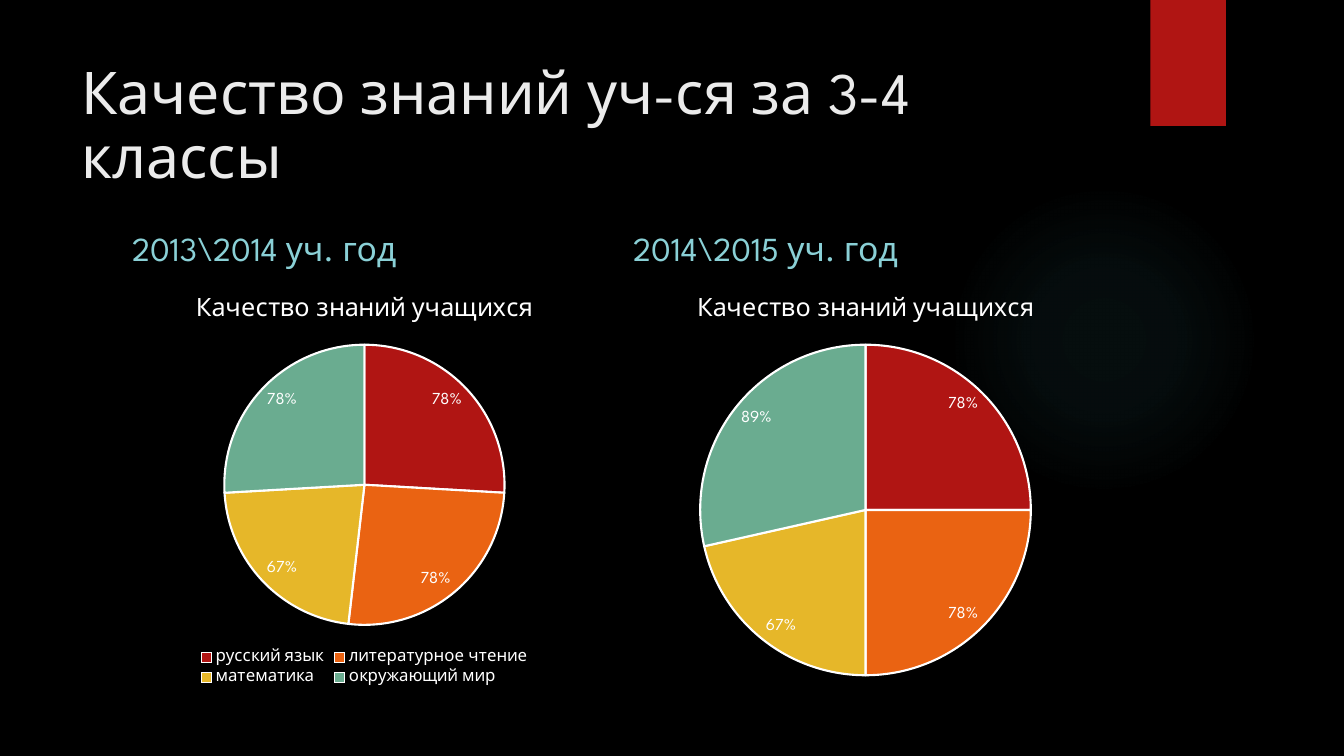
import pptx
import pptx.util
import pptx.oxml
import pptx.oxml.ns
import pptx.chart.data
import pptx.dml.color
import pptx.enum.chart
import pptx.enum.shapes
import pptx.enum.text

Inches = pptx.util.Inches
Pt = pptx.util.Pt
qn = pptx.oxml.ns.qn

FONT = "League Spartan"
COLOURS = {
    "background": "000000",
    "title": "EBEBEB",
    "heading": "8AD0D6",
    "chart_text": "FFFFFF",
    "ribbon": "B01513",
    "glow": "50B9C1",
}
SLICES = ["B01513", "EA6312", "E6B729", "6AAC90"]
CHART_WIDTH, CHART_HEIGHT, CHART_TOP = 4.81, 4.09, 2.75
PIE_OFFSET = 0.67
SUBJECTS = ["русский язык", "литературное чтение", "математика", "окружающий мир"]
YEARS = [
    (1, 1.21, "2013\\2014 уч. год", SUBJECTS, [0.78, 0.78, 0.67, 0.78], 2.78, True),
    (3, 6.18, "2014\\2015 уч. год", ["1", "2", "3", "4"], [0.78, 0.78, 0.67, 0.89], 3.28, False),
]


def rgb(value):
    return pptx.dml.color.RGBColor.from_string(value)


def style_font(font, size, colour):
    font.name = FONT
    font.size = Pt(size)
    font.bold = False
    font.color.rgb = rgb(COLOURS[colour])


def add_decoration(page, kind, left, top, width, height, colour):
    shape = page.shapes.add_shape(
        kind, Inches(left), Inches(top), Inches(width), Inches(height))
    shape.shadow.inherit = False
    shape.fill.solid()
    shape.fill.fore_color.rgb = rgb(COLOURS[colour])
    shape.line.fill.background()
    return shape


def add_glow(page):
    glow = add_decoration(
        page, pptx.enum.shapes.MSO_SHAPE.OVAL, 9.41, 1.83, 3.08, 3.08, "glow")
    stops = "".join(
        f'<a:gs pos="{position * 1000}"><a:srgbClr val="{COLOURS["glow"]}">'
        f'<a:alpha val="{alpha * 1000}"/></a:srgbClr></a:gs>'
        for position, alpha in [(0, 7), (36, 6), (69, 0)])
    gradient = pptx.oxml.parse_xml(
        f'<a:gradFill {pptx.oxml.ns.nsdecls("a")}><a:gsLst>{stops}</a:gsLst>'
        '<a:path path="circle"><a:fillToRect l="50000" t="50000" r="50000" b="50000"/>'
        '</a:path></a:gradFill>')
    solid = glow.element.spPr.find(qn("a:solidFill"))
    solid.getparent().replace(solid, gradient)


def add_ribbon(page):
    ribbon = add_decoration(
        page, pptx.enum.shapes.MSO_SHAPE.RECTANGLE, 11.41, 0, 0.75, 1.25, "ribbon")
    shadow = pptx.oxml.parse_xml(
        f'<a:outerShdw {pptx.oxml.ns.nsdecls("a")} blurRad="{Pt(3)}" dist="{Pt(2)}" '
        'dir="5400000" rotWithShape="0"><a:srgbClr val="000000">'
        '<a:alpha val="45000"/></a:srgbClr></a:outerShdw>')
    ribbon.element.spPr.find(qn("a:effectLst")).append(shadow)


def fill_placeholder(box, place, text, size, colour, anchor):
    box.left, box.top, box.width, box.height = [Inches(length) for length in place]
    frame = box.text_frame
    frame.word_wrap = True
    frame.auto_size = pptx.enum.text.MSO_AUTO_SIZE.NONE
    frame.vertical_anchor = anchor
    para = frame.paragraphs[0]
    para.alignment = pptx.enum.text.PP_ALIGN.LEFT
    para.space_before = Pt(0)
    para.line_spacing = 0.9 if colour == "title" else 1.0
    span = para.add_run()
    span.text = text
    style_font(span.font, size, colour)


def place_pie(chart, diameter):
    width, height = diameter / CHART_WIDTH, diameter / CHART_HEIGHT
    values = {"x": (1 - width) / 2, "y": PIE_OFFSET / CHART_HEIGHT, "w": width, "h": height}
    lengths = "".join(f'<c:{key} val="{value:.4f}"/>' for key, value in values.items())
    layout = pptx.oxml.parse_xml(
        f'<c:layout {pptx.oxml.ns.nsdecls("c")}><c:manualLayout>'
        '<c:layoutTarget val="inner"/><c:xMode val="edge"/><c:yMode val="edge"/>'
        f'{lengths}</c:manualLayout></c:layout>')
    area = chart.element.find(".//" + qn("c:plotArea"))
    for old in area.findall(qn("c:layout")):
        area.remove(old)
    area.insert(0, layout)


def add_pie(page, left, categories, values, diameter, with_legend):
    data = pptx.chart.data.CategoryChartData(number_format="0%")
    data.categories = categories
    data.add_series("Series 1", values)
    chart = page.shapes.add_chart(
        pptx.enum.chart.XL_CHART_TYPE.PIE, Inches(left), Inches(CHART_TOP),
        Inches(CHART_WIDTH), Inches(CHART_HEIGHT), data).chart
    style_font(chart.font, 10, "chart_text")
    chart.has_title = True
    span = chart.chart_title.text_frame.paragraphs[0].add_run()
    span.text = "Качество знаний учащихся"
    style_font(span.font, 18, "chart_text")
    chart.has_legend = with_legend
    if with_legend:
        chart.legend.position = pptx.enum.chart.XL_LEGEND_POSITION.BOTTOM
        chart.legend.include_in_layout = False
        style_font(chart.legend.font, 12, "chart_text")
    plot = chart.plots[0]
    plot.vary_by_categories = True
    plot.has_data_labels = True
    labels = plot.data_labels
    labels.show_value = True
    labels.show_percentage = False
    labels.number_format = "0%"
    labels.number_format_is_linked = False
    labels.position = pptx.enum.chart.XL_LABEL_POSITION.INSIDE_END
    style_font(labels.font, 12, "chart_text")
    for index, colour in enumerate(SLICES):
        form = plot.series[0].points[index].format
        form.fill.solid()
        form.fill.fore_color.rgb = rgb(colour)
        form.line.color.rgb = rgb(COLOURS["chart_text"])
        form.line.width = Pt(1.5)
    place_pie(chart, diameter)


def main():
    deck = pptx.Presentation()
    deck.slide_width, deck.slide_height = Inches(13.33), Inches(7.5)
    page = deck.slides.add_slide(deck.slide_layouts.get_by_name("Comparison"))
    page.background.fill.solid()
    page.background.fill.fore_color.rgb = rgb(COLOURS["background"])
    add_glow(page)
    add_ribbon(page)
    anchors = pptx.enum.text.MSO_ANCHOR
    fill_placeholder(page.shapes.title, (0.71, 0.5, 10.29, 1.53),
                     "Качество знаний уч-ся за 3-4 классы", 42, "title", anchors.MIDDLE)
    bodies = {box.placeholder_format.idx: box for box in page.placeholders}
    for number, left, heading, categories, values, diameter, with_legend in YEARS:
        fill_placeholder(bodies[number], (left, 2.08, CHART_WIDTH, 0.63),
                         heading, 24, "heading", anchors.BOTTOM)
        add_pie(page, left, categories, values, diameter, with_legend)
        empty = bodies[number + 1].element
        empty.getparent().remove(empty)
    deck.save("out.pptx")


if __name__ == "__main__":
    main()
